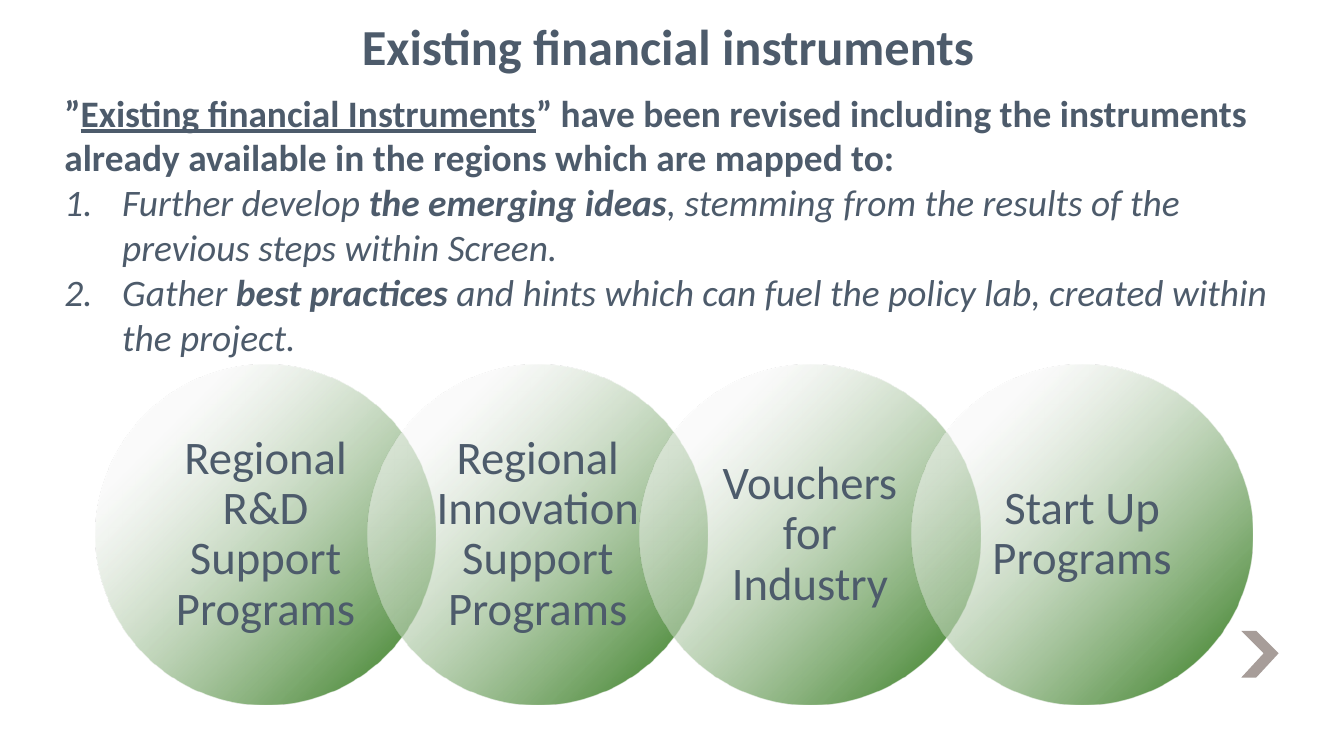
"""Build the slide on existing financial instruments."""
from lxml import etree
from pptx import Presentation
from pptx import util as u
from pptx.dml.color import RGBColor
from pptx.enum import shapes, text
from pptx.oxml import ns, parse_xml

SLATE = RGBColor(0x4D, 0x5B, 0x6B)
TAUPE = RGBColor(0xA7, 0x9D, 0x99)
GRADIENT_STOPS = [(0, "297412", 100), (80, "F7F7F7", 50), (100, "F8F8F8", 50)]

TITLE = "Existing financial instruments"
INTRO = [
    ("”", {"bold": True}),
    ("Existing financial Instruments", {"bold": True, "underline": True}),
    ("” have been revised including the instruments already available "
     "in the regions which are mapped to:", {"bold": True}),
]
STEPS = [
    ("Further develop ", "the emerging ideas",
     ", stemming from the results of the previous steps within Screen."),
    ("Gather ", "best practices ",
     "and hints which can fuel the policy lab, created within the project."),
]
PROGRAMS = [
    "Regional R&D Support Programs",
    "Regional Innovation Support Programs",
    "Vouchers for Industry",
    "Start Up Programs",
]

CIRCLE_LEFT, CIRCLE_TOP, CIRCLE_SIZE, CIRCLE_STEP = 51.2, 195.3, 182.2, 145.8
CHEVRON = [(673.2, 337.7), (665.3, 337.7), (676.8, 350.2), (665.3, 362.7),
           (673.2, 362.7), (684.7, 350.2)]
NUMBER_INDENT = 31


def add_run(paragraph, content, size, bold=False, italic=False, underline=False):
    run = paragraph.add_run()
    run.text = content
    font = run.font
    font.name, font.size, font.color.rgb = "Calibri", u.Pt(size), SLATE
    font.bold, font.italic, font.underline = bold, italic, underline


def number(paragraph):
    properties = paragraph._p.get_or_add_pPr()
    properties.set("marL", str(u.Pt(NUMBER_INDENT)))
    properties.set("indent", str(-u.Pt(NUMBER_INDENT)))
    etree.SubElement(properties, ns.qn("a:buFont"), typeface="+mj-lt")
    etree.SubElement(properties, ns.qn("a:buAutoNum"), type="arabicPeriod")


def fill_radial(shape):
    stops = "".join(
        f'<a:gs pos="{position * 1000}"><a:srgbClr val="{color}">'
        f'<a:alpha val="{opacity * 1000}"/></a:srgbClr></a:gs>'
        for position, color, opacity in GRADIENT_STOPS)
    gradient = parse_xml(
        f'<a:gradFill {ns.nsdecls("a")} rotWithShape="1"><a:gsLst>{stops}</a:gsLst>'
        '<a:path path="circle"><a:fillToRect l="100000" t="100000"/></a:path></a:gradFill>')
    shape._element.spPr.find(ns.qn("a:prstGeom")).addnext(gradient)


def add_title(slide):
    title = slide.shapes.title
    title.left, title.top, title.width, title.height = map(u.Pt, (27.4, 4.3, 661, 39))
    frame = title.text_frame
    frame.auto_size = text.MSO_AUTO_SIZE.NONE
    frame.vertical_anchor = text.MSO_ANCHOR.TOP
    frame.paragraphs[0].alignment = text.PP_ALIGN.CENTER
    add_run(frame.paragraphs[0], TITLE, size=27, bold=True)


def add_body(slide):
    frame = slide.shapes.add_textbox(*map(u.Pt, (27.4, 44.6, 674.6, 200))).text_frame
    frame.word_wrap = True
    for content, style in INTRO:
        add_run(frame.paragraphs[0], content, size=20, **style)
    for step in STEPS:
        paragraph = frame.add_paragraph()
        number(paragraph)
        for content, bold in zip(step, (False, True, False)):
            add_run(paragraph, content, size=20, bold=bold, italic=True)


def add_chevron(slide):
    builder = slide.shapes.build_freeform(*CHEVRON[0], scale=u.Pt(1))
    builder.add_line_segments(CHEVRON[1:], close=True)
    chevron = builder.convert_to_shape()
    chevron.shadow.inherit = False
    chevron.fill.solid()
    chevron.fill.fore_color.rgb = TAUPE
    chevron.line.fill.background()


def add_circle(slide, index, label):
    left = CIRCLE_LEFT + index * CIRCLE_STEP
    circle = slide.shapes.add_shape(
        shapes.MSO_SHAPE.OVAL,
        *map(u.Pt, (left, CIRCLE_TOP, CIRCLE_SIZE, CIRCLE_SIZE)))
    circle.shadow.inherit = False
    circle.line.fill.background()
    fill_radial(circle)
    frame = circle.text_frame
    frame.word_wrap = True
    frame.vertical_anchor = text.MSO_ANCHOR.MIDDLE
    frame.margin_left = frame.margin_right = u.Pt(10)
    frame.margin_top = frame.margin_bottom = u.Pt(2.5)
    paragraph = frame.paragraphs[0]
    paragraph.alignment = text.PP_ALIGN.CENTER
    paragraph.line_spacing = 0.9
    add_run(paragraph, label, size=25)


def main():
    presentation = Presentation()
    presentation.slide_width, presentation.slide_height = u.Pt(720), u.Pt(405)
    slide = presentation.slides.add_slide(presentation.slide_layouts[5])
    add_chevron(slide)
    add_title(slide)
    add_body(slide)
    for index, label in enumerate(PROGRAMS):
        add_circle(slide, index, label)
    presentation.save("out.pptx")


if __name__ == "__main__":
    main()
